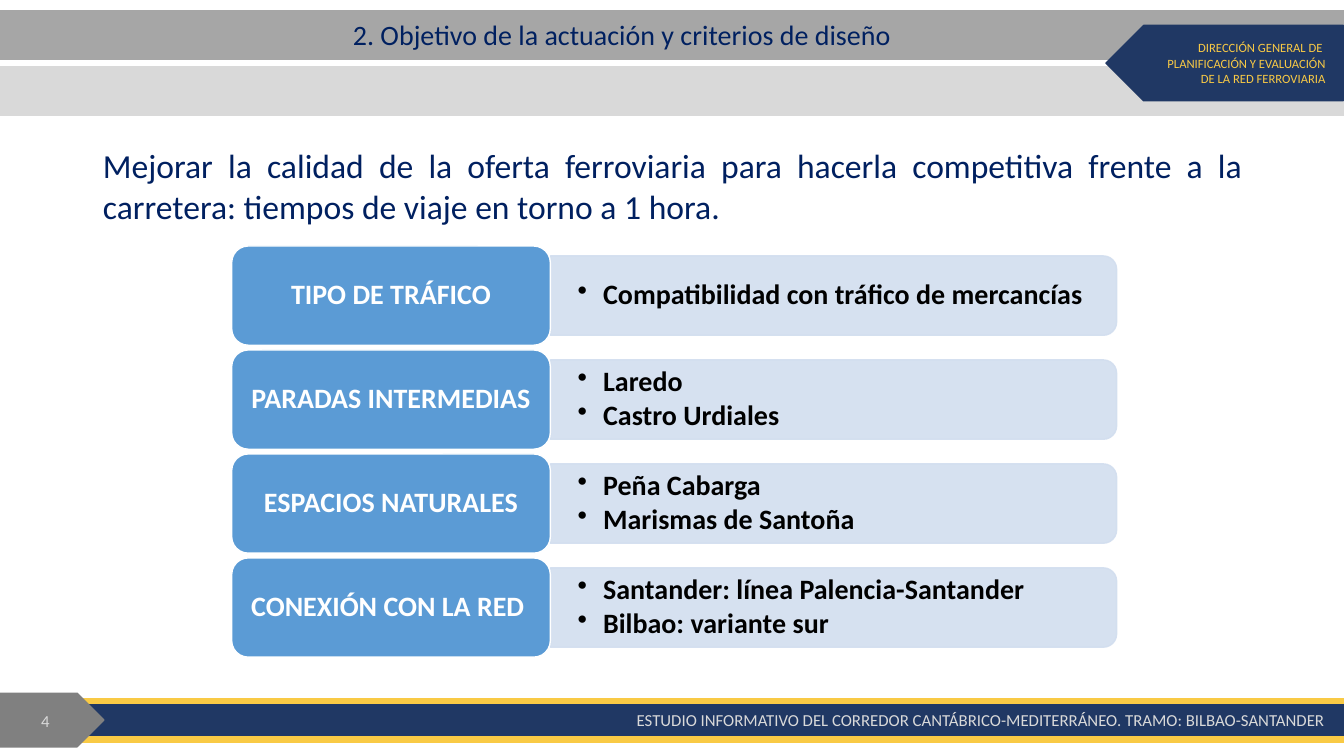
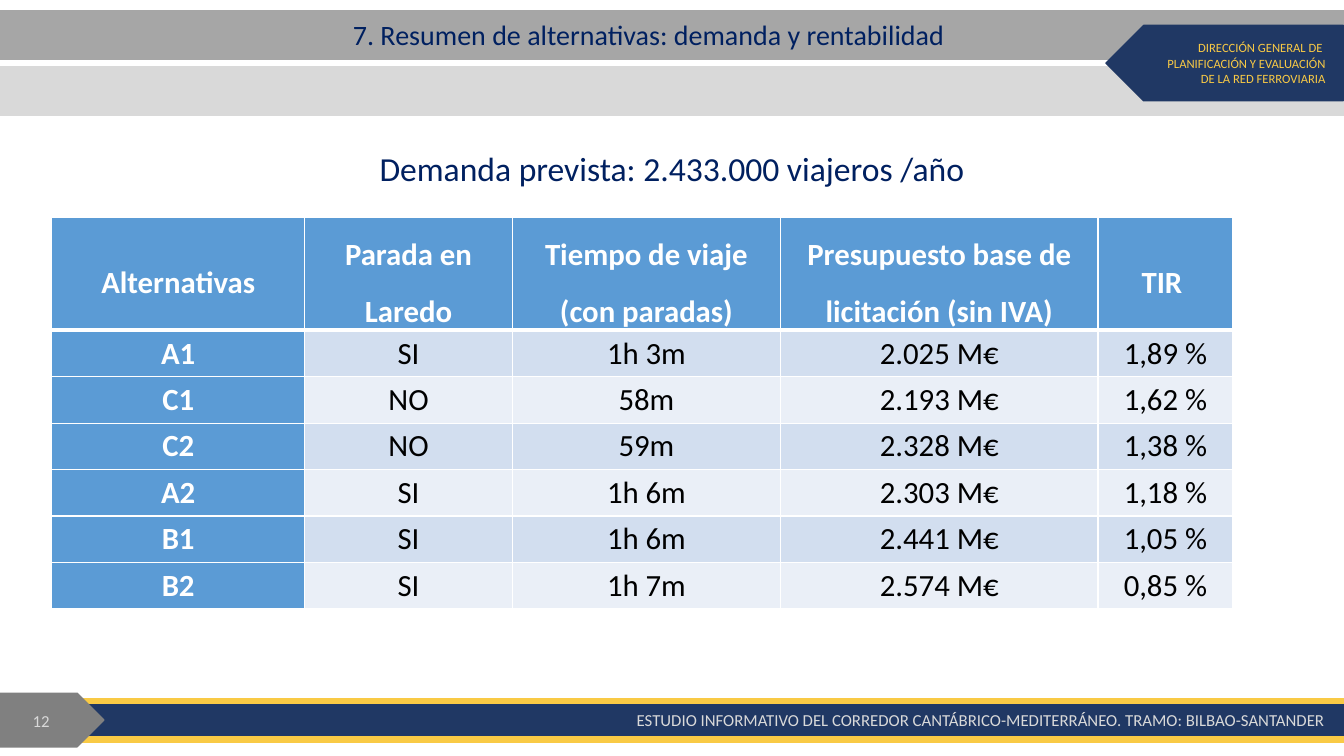
from dataclasses import dataclass, field
from typing import Any, NamedTuple

from lxml.etree import SubElement
from pptx import Presentation
from pptx.dml.color import RGBColor as Rgb
from pptx.enum.shapes import MSO_SHAPE as Preset
from pptx.enum.text import MSO_ANCHOR as Anchor
from pptx.enum.text import MSO_AUTO_SIZE as AutoSize
from pptx.enum.text import PP_ALIGN as Align
from pptx.oxml.ns import qn
from pptx.shapes.autoshape import Shape
from pptx.slide import Slide
from pptx.text.text import TextFrame
from pptx.util import Cm, Pt


@dataclass(frozen=True)
class Theme:
    font: str = "Calibri"
    white: str = "FFFFFF"
    black: str = "000000"
    ink: str = "002060"
    navy: str = "203864"
    gold: str = "F9CA45"
    dark_grey: str = "808080"
    mid_grey: str = "A6A6A6"
    light_grey: str = "D9D9D9"
    blue: str = "5B9BD5"
    pale_blue: str = "D2DEEF"
    faint_blue: str = "EAEFF7"
    corner_size: float = 9
    footer_size: float = 12
    title_size: float = 20
    item_size: float = 20
    cell_size: float = 22
    lead_size: float = 24


THEME = Theme()


class Box(NamedTuple):
    left: float
    top: float
    width: float
    height: float


class Band(NamedTuple):
    preset: Preset
    box: Box
    colour: str
    rotation: float = 0


class Criterion(NamedTuple):
    label: str
    items: list[str]


@dataclass(frozen=True)
class TextStyle:
    size: float
    colour: str
    bold: bool = False
    bullet: str = ""
    hang: float = 0
    paragraph: dict[str, Any] = field(default_factory=dict)
    frame: dict[str, Any] = field(default_factory=dict)


SLIDE_WIDTH, SLIDE_HEIGHT = 33.87, 19.05

BANDS = [
    Band(Preset.RECTANGLE, Box(0, 0.28, SLIDE_WIDTH, 1.22), THEME.mid_grey),
    Band(Preset.RECTANGLE, Box(0, 1.68, SLIDE_WIDTH, 1.22), THEME.light_grey),
    Band(Preset.PENTAGON, Box(27.87, 0.64, 5.98, 1.9), THEME.navy, 180),
    Band(Preset.RECTANGLE, Box(0, 17.75, SLIDE_WIDTH, 0.79), THEME.navy),
    Band(Preset.RECTANGLE, Box(0, 18.57, SLIDE_WIDTH, 0.13), THEME.gold),
    Band(Preset.RECTANGLE, Box(0, 17.6, SLIDE_WIDTH, 0.13), THEME.gold),
    Band(Preset.PENTAGON, Box(-0.02, 17.47, 2.64, 1.35), THEME.dark_grey),
]

RIGHT = {"alignment": Align.RIGHT}
MIDDLE = {"vertical_anchor": Anchor.MIDDLE}
CORNER = TextStyle(THEME.corner_size, THEME.gold, paragraph=RIGHT)
FOOTER = TextStyle(THEME.footer_size, THEME.light_grey, paragraph=RIGHT)
PAGE = TextStyle(THEME.footer_size, THEME.light_grey, paragraph=RIGHT, frame=MIDDLE)
TITLE = TextStyle(
    THEME.title_size,
    THEME.ink,
    paragraph={"alignment": Align.LEFT, "line_spacing": 0.9},
    frame=MIDDLE,
)
GOAL = TextStyle(
    THEME.lead_size,
    THEME.ink,
    paragraph={"alignment": Align.JUSTIFY, "space_before": Pt(0)},
)
DEMAND = TextStyle(
    THEME.lead_size,
    THEME.ink,
    paragraph={"alignment": Align.CENTER, "space_before": Pt(0)},
)
LABEL = TextStyle(
    THEME.item_size,
    THEME.white,
    bold=True,
    paragraph={"alignment": Align.CENTER, "line_spacing": 0.9},
    frame=MIDDLE,
)
ITEMS = TextStyle(
    THEME.item_size,
    THEME.black,
    bold=True,
    bullet="•",
    hang=0.64,
    paragraph={"line_spacing": 0.9, "space_after": Pt(3)},
    frame=MIDDLE
    | {
        "margin_left": Cm(0.69),
        "margin_right": Cm(0.69),
        "margin_top": Cm(0.36),
        "margin_bottom": Cm(0.36),
    },
)
HEADER_CELL = TextStyle(
    THEME.cell_size,
    THEME.white,
    bold=True,
    paragraph={"alignment": Align.CENTER, "line_spacing": 1.5},
)
NAME_CELL = TextStyle(
    THEME.cell_size, THEME.white, bold=True, paragraph={"alignment": Align.CENTER}
)
VALUE_CELL = TextStyle(
    THEME.cell_size, THEME.black, paragraph={"alignment": Align.CENTER}
)
CELL_FORMAT = MIDDLE | {
    "margin_left": Cm(0.1),
    "margin_right": Cm(0.1),
    "margin_top": Cm(0),
    "margin_bottom": Cm(0),
}

CRITERIA = [
    Criterion("TIPO DE TRÁFICO", ["Compatibilidad con tráfico de mercancías"]),
    Criterion("PARADAS INTERMEDIAS", ["Laredo", "Castro Urdiales"]),
    Criterion("ESPACIOS NATURALES", ["Peña Cabarga", "Marismas de Santoña"]),
    Criterion(
        "CONEXIÓN CON LA RED ",
        ["Santander: línea Palencia-Santander", "Bilbao: variante sur"],
    ),
]
LABEL_BOX = Box(5.84, 6.2, 8.03, 2.5)
PANEL_WIDTH, PANEL_HEIGHT, CRITERION_PITCH = 14.27, 2.0, 2.62

ALTERNATIVES = [
    [
        "Alternativas",
        "Parada en Laredo",
        "Tiempo de viaje (con paradas)",
        "Presupuesto base de licitación (sin IVA)",
        "TIR ",
    ],
    ["A1", "SI", "1h 3m", "2.025 M€", "1,89 %"],
    ["C1", "NO", "58m", "2.193 M€", "1,62 %"],
    ["C2", "NO", "59m", "2.328 M€", "1,38 %"],
    ["A2", "SI", "1h 6m", "2.303 M€", "1,18 %"],
    ["B1", "SI", "1h 6m", "2.441 M€", "1,05 %"],
    ["B2", "SI", "1h 7m", "2.574 M€", "0,85 %"],
]
COLUMN_WIDTHS = [6.38, 5.23, 6.76, 8.0, 3.4]
HEADER_HEIGHT, ROW_HEIGHT = 2.49, 1.17


def apply(target: Any, values: dict[str, Any]) -> None:
    for name, value in values.items():
        setattr(target, name, value)


def lengths(box: Box) -> list[Cm]:
    return [Cm(value) for value in box]


def write(frame: TextFrame, lines: list[str], style: TextStyle) -> None:
    apply(frame, {"word_wrap": True, "auto_size": AutoSize.NONE} | style.frame)
    for index, line in enumerate(lines):
        paragraph = frame.add_paragraph() if index else frame.paragraphs[0]
        properties = paragraph._p.get_or_add_pPr()
        properties.set("marL", str(Cm(style.hang)))
        properties.set("indent", str(-Cm(style.hang)))
        if style.bullet:
            SubElement(properties, qn("a:buChar"), char=style.bullet)
        else:
            SubElement(properties, qn("a:buNone"))
        apply(paragraph, style.paragraph)
        run = paragraph.add_run()
        run.text = line
        apply(
            run.font,
            {"name": THEME.font, "size": Pt(style.size), "bold": style.bold},
        )
        run.font.color.rgb = Rgb.from_string(style.colour)


def add_text(slide: Slide, box: Box, lines: list[str], style: TextStyle) -> None:
    write(slide.shapes.add_textbox(*lengths(box)).text_frame, lines, style)


def add_block(slide: Slide, band: Band, line: str = "") -> Shape:
    block = slide.shapes.add_shape(band.preset, *lengths(band.box))
    block.rotation = band.rotation
    block.shadow.inherit = False
    block.fill.solid()
    block.fill.fore_color.rgb = Rgb.from_string(band.colour)
    block.line.color.rgb = Rgb.from_string(line or band.colour)
    block.line.width = Pt(1)
    return block


def add_framed_slide(
    deck: Any, title: str, page: int, lead: str, lead_box: Box, lead_style: TextStyle
) -> Slide:
    slide = deck.slides.add_slide(deck.slide_layouts.get_by_name("Title and Content"))
    for band in BANDS:
        add_block(slide, band)
    add_text(
        slide,
        Box(28.98, 0.89, 4.67, 1.42),
        ["DIRECCIÓN GENERAL DE ", "PLANIFICACIÓN Y EVALUACIÓN DE LA RED FERROVIARIA"],
        CORNER,
    )
    add_text(slide, Box(0, 17.65, 1.5, 1.02), [str(page)], PAGE)
    add_text(
        slide,
        Box(3.4, 17.75, 30.25, 0.76),
        ["ESTUDIO INFORMATIVO DEL CORREDOR CANTÁBRICO-MEDITERRÁNEO. TRAMO: BILBAO-SANTANDER"],
        FOOTER,
    )
    headings = [
        (slide.shapes.title, Box(8.64, 0.46, 18.44, 0.94), title, TITLE),
        (slide.placeholders[1], lead_box, lead, lead_style),
    ]
    for holder, box, text, style in headings:
        apply(holder, dict(zip(Box._fields, lengths(box))))
        write(holder.text_frame, [text], style)
        holder.element.getparent().append(holder.element)
    return slide


def add_criterion(slide: Slide, criterion: Criterion, top: float) -> None:
    panel_left = LABEL_BOX.left + LABEL_BOX.width
    centre_x = panel_left + PANEL_WIDTH / 2
    centre_y = top + LABEL_BOX.height / 2
    upright = Box(
        centre_x - PANEL_HEIGHT / 2,
        centre_y - PANEL_WIDTH / 2,
        PANEL_HEIGHT,
        PANEL_WIDTH,
    )
    panel = add_block(
        slide, Band(Preset.ROUND_2_SAME_RECTANGLE, upright, THEME.pale_blue, 90)
    )
    for colour in panel.element.spPr.iter(qn("a:srgbClr")):
        SubElement(colour, qn("a:alpha"), val="90000")
    items_box = Box(panel_left, centre_y - 0.9, PANEL_WIDTH - 0.1, 1.8)
    add_text(slide, items_box, criterion.items, ITEMS)
    label_band = Band(Preset.ROUNDED_RECTANGLE, LABEL_BOX._replace(top=top), THEME.blue)
    label = add_block(slide, label_band, THEME.white)
    write(label.text_frame, [criterion.label], LABEL)


def add_border(properties: Any, side: str, width: float) -> None:
    border = SubElement(properties, qn(f"a:{side}"), w=str(Pt(width)))
    SubElement(SubElement(border, qn("a:solidFill")), qn("a:srgbClr"), val=THEME.white)


def add_alternatives(slide: Slide) -> None:
    heights = [HEADER_HEIGHT] + [ROW_HEIGHT] * (len(ALTERNATIVES) - 1)
    box = Box(1.3, 5.49, sum(COLUMN_WIDTHS), sum(heights))
    table = slide.shapes.add_table(
        len(heights), len(COLUMN_WIDTHS), *lengths(box)
    ).table
    for column, width in zip(table.columns, COLUMN_WIDTHS):
        column.width = Cm(width)
    for row, (height, values) in enumerate(zip(heights, ALTERNATIVES)):
        table.rows[row].height = Cm(height)
        stripe = THEME.pale_blue if row % 2 else THEME.faint_blue
        edges = {"lnL": 1, "lnR": 1, "lnT": 3 if row == 1 else 1, "lnB": 1 if row else 3}
        for column, value in enumerate(values):
            cell = table.cell(row, column)
            for side, width in edges.items():
                add_border(cell._tc.get_or_add_tcPr(), side, width)
            heading = row == 0 or column == 0
            cell.fill.solid()
            cell.fill.fore_color.rgb = Rgb.from_string(THEME.blue if heading else stripe)
            apply(cell, CELL_FORMAT)
            style = NAME_CELL if heading else VALUE_CELL
            write(cell.text_frame, [value], style if row else HEADER_CELL)


def main() -> None:
    deck = Presentation()
    apply(deck, {"slide_width": Cm(SLIDE_WIDTH), "slide_height": Cm(SLIDE_HEIGHT)})
    goals = add_framed_slide(
        deck,
        "2. Objetivo de la actuación y criterios de diseño",
        4,
        "Mejorar la calidad de la oferta ferroviaria para hacerla competitiva"
        " frente a la carretera: tiempos de viaje en torno a 1 hora.",
        Box(2.34, 3.53, 29.23, 2.44),
        GOAL,
    )
    for index, criterion in enumerate(CRITERIA):
        add_criterion(goals, criterion, LABEL_BOX.top + index * CRITERION_PITCH)
    summary = add_framed_slide(
        deck,
        "7. Resumen de alternativas: demanda y rentabilidad",
        12,
        "Demanda prevista: 2.433.000 viajeros /año",
        Box(1.02, 3.61, 31.83, 1.4),
        DEMAND,
    )
    add_alternatives(summary)
    deck.save("out.pptx")


if __name__ == "__main__":
    main()
